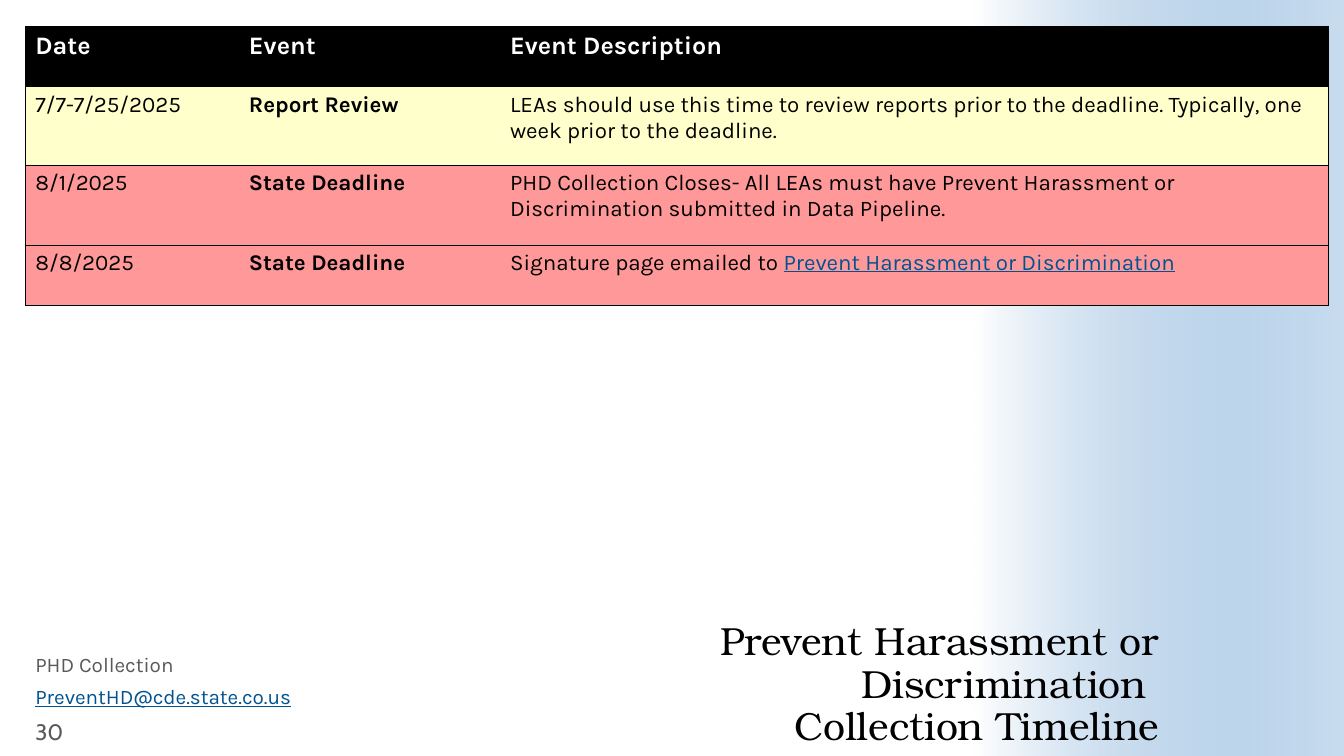
import pptx
import pptx.chart.data
import pptx.dml.color
import pptx.enum.shapes
import pptx.enum.text
import pptx.oxml
import pptx.oxml.ns
import pptx.util

Cm = pptx.util.Cm
Pt = pptx.util.Pt
ALIGN = pptx.enum.text.PP_ALIGN
ANCHOR = pptx.enum.text.MSO_ANCHOR

BLACK, WHITE, GREY, LINK = "000000", "FFFFFF", "595959", "005390"
YELLOW, RED = "FFFFCC", "FF9999"

COLS = [5.38, 6.58, 20.88]
# height, fill, cells; a cell is a list of (text, is link)
ROWS = [
    (1.52, BLACK, ["Date", "Event", "Event Description"]),
    (1.98, YELLOW, ["7/7-7/25/2025", "Report Review",
                    "LEAs should use this time to review reports prior to the "
                    "deadline. Typically, one week prior to the deadline."]),
    (2.01, RED, ["8/1/2025", "State Deadline",
                 "PHD Collection Closes- All LEAs must have Prevent Harassment "
                 "or Discrimination submitted in Data Pipeline."]),
    (1.52, RED, ["8/8/2025", "State Deadline", "Signature page emailed to "]),
]
MAIL = "Prevent Harassment or Discrimination"


def rgb(code):
    return pptx.dml.color.RGBColor.from_string(code)


def style(font, name, size, color, bold=False, link=False):
    font.name = name
    font.size = Pt(size)
    font.color.rgb = rgb(LINK if link else color)
    font.bold = bold
    font.underline = link


def write(slide, box, text, name, size, color, link=False,
          align=ALIGN.LEFT, anchor=ANCHOR.TOP, space=1.0, inset=None):
    """Add a text box; box is left, top, width, height in cm."""
    frame = slide.shapes.add_textbox(*map(Cm, box)).text_frame
    frame.word_wrap = True
    frame.vertical_anchor = anchor
    if inset is not None:
        frame.margin_left = frame.margin_right = Cm(inset)
        frame.margin_top = frame.margin_bottom = Cm(inset)
    frame.text = text
    for para in frame.paragraphs:
        para.alignment = align
        para.line_spacing = space
        for run in para.runs:
            style(run.font, name, size, color, link=link)


def shade(slide, box):
    """Fade from white to a clear blue, left to right."""
    kind = pptx.enum.shapes.MSO_SHAPE.RECTANGLE
    panel = slide.shapes.add_shape(kind, *map(Cm, box))
    panel.shadow.inherit = False
    panel.line.fill.background()
    panel.fill.gradient()
    panel.fill.gradient_angle = 0
    for stop, color in zip(panel.fill.gradient_stops, (WHITE, "488BC9")):
        stop.color.rgb = rgb(color)
    tags = panel.element.findall(".//" + pptx.oxml.ns.qn("a:srgbClr"))
    tags[-1].append(pptx.oxml.parse_xml(
        f'<a:alpha {pptx.oxml.ns.nsdecls("a")} val="30000"/>'))


def edge(cell, side, shown):
    fill = (f'<a:solidFill><a:srgbClr val="{BLACK}"/></a:solidFill>'
            if shown else "<a:noFill/>")
    cell._tc.get_or_add_tcPr().append(pptx.oxml.parse_xml(
        f'<a:ln{side} {pptx.oxml.ns.nsdecls("a")} w="6350">{fill}</a:ln{side}>'))


def dates(slide, left, top):
    """Place the table of dates."""
    high = sum(row[0] for row in ROWS)
    box = (left, top, sum(COLS), high)
    table = slide.shapes.add_table(
        len(ROWS), len(COLS), *map(Cm, box)).table
    table.horz_banding = False
    for col, width in zip(table.columns, COLS):
        col.width = Cm(width)
    for r, (height, fill, texts) in enumerate(ROWS):
        table.rows[r].height = Cm(height)
        head = r == 0
        for c, text in enumerate(texts):
            cell = table.cell(r, c)
            edge(cell, "L", c == 0)
            edge(cell, "R", c == len(COLS) - 1)
            edge(cell, "T", True)
            edge(cell, "B", True)
            cell.fill.solid()
            cell.fill.fore_color.rgb = rgb(fill)
            cell.text_frame.text = text
            style(cell.text_frame.paragraphs[0].runs[0].font, "Karla",
                  18 if head else 16, WHITE if head else BLACK,
                  bold=head or c == 1)
    last = table.cell(len(ROWS) - 1, len(COLS) - 1)
    run = last.text_frame.paragraphs[0].add_run()
    run.text = MAIL
    style(run.font, "Karla", 16, BLACK, link=True)


def footer(slide, left, top):
    """Place the contact lines and the page number."""
    step = 0.8
    write(slide, (left, top, 9.88, 0.79), "PHD Collection",
          "Karla", 14.8, GREY, space=0.8)
    write(slide, (left, top + step, 9.88, 0.79), "PreventHD@cde.state.co.us",
          "Karla", 14.8, GREY, link=True, space=0.8)
    write(slide, (left, top + 2 * step, 2.16, 0.79), "30",
          "Cabin", 16, GREY, anchor=ANCHOR.MIDDLE)


def main():
    deck = pptx.Presentation()
    deck.slide_width, deck.slide_height = Cm(33.87), Cm(19.05)
    slide = deck.slides.add_slide(deck.slide_layouts[6])
    shade(slide, (24.57, 0, 9.3, 19.05))
    write(slide, (10.82, 16.38, 18.39, 2.49),
          "Prevent Harassment or Discrimination \vCollection Timeline",
          "TeX Gyre Bonum", 28, BLACK, align=ALIGN.RIGHT,
          anchor=ANCHOR.BOTTOM, space=0.9, inset=0)
    dates(slide, 0.64, 0.66)
    footer(slide, 0.64, 16.43)
    deck.save("out.pptx")


if __name__ == "__main__":
    main()
